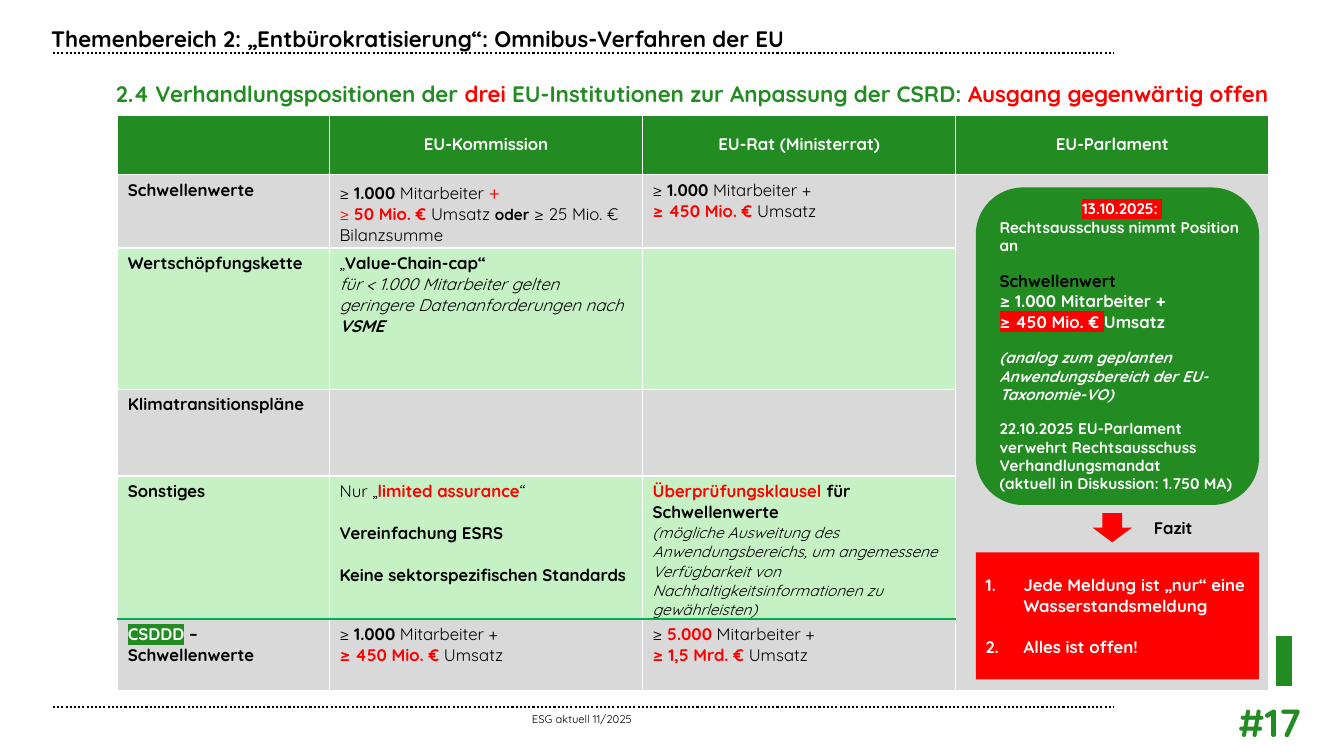
from lxml import etree
from pptx import Presentation
from pptx.dml.color import RGBColor
from pptx.enum.dml import MSO_LINE
from pptx.enum.shapes import MSO_CONNECTOR, MSO_SHAPE
from pptx.enum.text import MSO_ANCHOR, PP_ALIGN
from pptx.oxml.ns import qn
from pptx.util import Pt

LEFT, CENTER, RIGHT = PP_ALIGN.LEFT, PP_ALIGN.CENTER, PP_ALIGN.RIGHT
TOP, MIDDLE = MSO_ANCHOR.TOP, MSO_ANCHOR.MIDDLE
FONT = "Quicksand"
COLORS = {"green": "228B22", "red": "FF0000", "black": "000000", "white": "FFFFFF",
          "grey": "D9D9D9", "mint": "C5F1C5", "rule": "00B050"}
STYLES = {
    "bold": {"bold": True}, "italic": {"italic": True},
    "red": {"color": "red"}, "black": {"color": "black"}, "white": {"color": "white"},
    "on_red": {"highlight": "red"}, "on_green": {"highlight": "green"},
    "11pt": {"size": 11}, "12pt": {"size": 12}, "14pt": {"size": 14},
}

# Content: a text is a list of paragraphs, a paragraph a list of runs (text, styles)
TITLE = "Themenbereich 2: „Entbürokratisierung“: Omnibus-Verfahren der EU"
SUBTITLE = [[("2.4 Verhandlungspositionen der ", ""), ("drei", "red"),
             (" EU-Institutionen zur Anpassung der CSRD: ", ""),
             ("Ausgang gegenwärtig offen", "red")]]
FOOTER, PAGE, CONCLUSION = "ESG aktuell 11/2025", "#17", "Fazit"

HEADERS = ["", "EU-Kommission", "EU-Rat (Ministerrat)", "EU-Parlament"]
STAFF_1000 = [("≥ ", ""), ("1.000", "bold"), (" Mitarbeiter +\n", "")]
SALES_450 = [("≥ 450 Mio. € ", "bold red"), ("Umsatz", "")]
ROWS = [
    ([[("Schwellenwerte", "bold")]],
     [[("≥ ", ""), ("1.000", "bold"), (" Mitarbeiter ", ""), ("+\n", "red 14pt"),
       ("≥ ", "red"), ("50 Mio. € ", "bold red"), ("Umsatz ", ""),
       ("oder", "bold 11pt"), (" ≥ 25 Mio. € Bilanzsumme", "")]],
     [STAFF_1000 + SALES_450]),
    ([[("Wertschöpfungskette", "bold")]],
     [[("„", ""), ("Value-Chain-cap“\n", "bold"),
       ("für < 1.000 Mitarbeiter gelten geringere Datenanforderungen nach ", "italic"),
       ("VSME", "bold italic")]],
     None),
    ([[("Klimatransitionspläne", "bold")]], None, None),
    ([[("Sonstiges", "bold")]],
     [[("Nur „", ""), ("limited assurance", "bold red"), ("“", "")],
      [("Vereinfachung ESRS", "bold")],
      [("Keine sektorspezifischen Standards", "bold")]],
     [[("Überprüfungsklausel ", "bold red"), ("für Schwellenwerte\n", "bold"),
       ("(mögliche Ausweitung des Anwendungsbereichs, um angemessene Verfügbarkeit "
        "von Nachhaltigkeitsinformationen zu gewährleisten)", "italic 11pt")]]),
    ([[("CSDDD", "bold white on_green"), (" – Schwellenwerte", "bold")]],
     [STAFF_1000 + SALES_450],
     [[("≥ ", ""), ("5.000", "bold red"), (" Mitarbeiter +\n", ""),
       ("≥ 1,5 Mrd. € ", "bold red"), ("Umsatz", "")]]),
]
PARLIAMENT = [
    [("13.10.2025: ", "on_red")],
    [("Rechtsausschuss nimmt Position an", "")],
    [("Schwellenwert", "black 12pt")],
    [("≥ 1.000 Mitarbeiter +\n", "12pt"), ("≥ 450 Mio. € ", "12pt on_red"),
     ("Umsatz", "12pt")],
    [("(analog zum geplanten Anwendungsbereich der EU-Taxonomie-VO)", "italic")],
    [("22.10.2025 EU-Parlament verwehrt Rechtsausschuss Verhandlungsmandat\n"
      "(aktuell in Diskussion: 1.750 MA)", "")],
]
TAKEAWAYS = [[("Jede Meldung ist „nur“ eine Wasserstandsmeldung", "")],
             [("Alles ist offen!", "")]]

# Layout
COLUMN_WIDTHS = [151.2, 223.7, 223.7, 223.7]
ROW_HEIGHTS = [42.5, 52.6, 100.8, 62, 102.2, 51]
TABLE_LEFT, TABLE_TOP = 84.2, 82.1
PANEL_LEFT, PANEL_WIDTH = 697, 202.3
RULE_LEFT, RULE_RIGHT = 37.8, 795

prs = Presentation()
prs.slide_width, prs.slide_height = Pt(960), Pt(540)
slide = prs.slides.add_slide(prs.slide_layouts[6])


def rgb(name):
    return RGBColor.from_string(COLORS[name])


def add_run(paragraph, text, size, color, bold=False, italic=False, highlight=None):
    run = paragraph.add_run()
    run.text = text
    font = run.font
    font.name, font.size, font.bold, font.italic = FONT, Pt(size), bold, italic
    font.color.rgb = rgb(color)
    if highlight:
        mark = etree.Element(qn("a:highlight"))
        etree.SubElement(mark, qn("a:srgbClr"), val=COLORS[highlight])
        run._r.rPr.find(qn("a:latin")).addprevious(mark)


def write(frame, text, align=LEFT, gaps=(), size=12, color="black", bold=False):
    """Fill a frame; gaps maps a paragraph's index to the space before it."""
    frame.word_wrap = True
    paragraphs = [[(text, "")]] if isinstance(text, str) else text
    for i, runs in enumerate(paragraphs):
        paragraph = frame.add_paragraph() if i else frame.paragraphs[0]
        paragraph.alignment = align
        if i in gaps:
            paragraph.space_before = Pt(gaps[i])
        for words, styles in runs:
            look = {"size": size, "color": color, "bold": bold}
            for style in styles.split():
                look.update(STYLES[style])
            for n, line in enumerate(words.split("\n")):
                if n:
                    paragraph.add_line_break()
                if line:
                    add_run(paragraph, line, **look)


def add_label(left, top, width, height, text, inset=True, anchor=TOP, **look):
    frame = slide.shapes.add_textbox(Pt(left), Pt(top), Pt(width), Pt(height)).text_frame
    frame.vertical_anchor = anchor
    if not inset:
        frame.margin_left = frame.margin_right = frame.margin_top = frame.margin_bottom = 0
    write(frame, text, **look)


def add_block(kind, left, top, width, height, color):
    block = slide.shapes.add_shape(kind, Pt(left), Pt(top), Pt(width), Pt(height))
    block.shadow.inherit = False
    block.fill.solid()
    block.fill.fore_color.rgb = rgb(color)
    block.line.fill.background()
    block.text_frame.vertical_anchor = MIDDLE
    return block


def add_border(cell, side):
    line = etree.Element(qn("a:" + side), w=str(Pt(1)))
    fill = etree.SubElement(line, qn("a:solidFill"))
    etree.SubElement(fill, qn("a:srgbClr"), val=COLORS["rule"])
    cell._tc.get_or_add_tcPr().insert(0, line)


# Dotted rules, page number, footer and side mark
for y in (37.8, 504.7):
    rule = slide.shapes.add_connector(MSO_CONNECTOR.STRAIGHT, Pt(RULE_LEFT), Pt(y),
                                      Pt(RULE_RIGHT), Pt(y))
    rule.line.color.rgb = rgb("black")
    rule.line.width = Pt(1.5)
    rule.line.dash_style = MSO_LINE.ROUND_DOT
    etree.SubElement(rule._element.spPr, qn("a:effectLst"))
add_label(820, 495.4, 116.7, 41, PAGE, align=RIGHT, size=28, color="green", bold=True)
add_label(37.4, 509, 756.7, 9.4, FOOTER, inset=False, anchor=MIDDLE, align=CENTER, size=8)
add_block(MSO_SHAPE.RECTANGLE, 911.5, 454.3, 11.4, 35.7, "green")

# Headings
add_label(82.8, 56.9, 833.8, 25.2, SUBTITLE, inset=False, size=16, color="green", bold=True)
add_label(29.5, 14.4, 788.4, 46, TITLE, size=16, bold=True)

# Comparison table
table = slide.shapes.add_table(len(ROW_HEIGHTS), len(COLUMN_WIDTHS), Pt(TABLE_LEFT),
                               Pt(TABLE_TOP), Pt(sum(COLUMN_WIDTHS)),
                               Pt(sum(ROW_HEIGHTS))).table
for column, width in zip(table.columns, COLUMN_WIDTHS):
    column.width = Pt(width)
for row, height in zip(table.rows, ROW_HEIGHTS):
    row.height = Pt(height)
table.cell(1, 3).merge(table.cell(len(ROWS), 3))
for r, row in enumerate([HEADERS] + [list(texts) + [None] for texts in ROWS]):
    for c, text in enumerate(row):
        cell = table.cell(r, c)
        cell.fill.solid()
        if r == 0:
            cell.fill.fore_color.rgb = rgb("green")
            cell.vertical_anchor = MIDDLE
            if text:
                write(cell.text_frame, text, align=CENTER, color="white", bold=True)
            continue
        cell.fill.fore_color.rgb = rgb("grey" if r % 2 or c == 3 else "mint")
        cell.margin_bottom = 0
        if text:
            write(cell.text_frame, text, gaps={1: 15, 2: 15})
        if c < 3 and r >= len(ROWS) - 1:
            add_border(cell, "lnT" if r == len(ROWS) else "lnB")

# Parliament position
position = add_block(MSO_SHAPE.ROUNDED_RECTANGLE, PANEL_LEFT, 133.9, PANEL_WIDTH, 226.8,
                     "green").text_frame
position.margin_right = 0
write(position, PARLIAMENT, gaps={2: 11.5, 4: 12, 5: 11}, size=11, color="white", bold=True)
position.paragraphs[0].alignment = CENTER

# Conclusion
add_block(MSO_SHAPE.DOWN_ARROW, 780.5, 366.5, 28, 20.9, "red")
takeaways = add_block(MSO_SHAPE.RECTANGLE, PANEL_LEFT, 394.6, PANEL_WIDTH, 90.7,
                      "red").text_frame
write(takeaways, TAKEAWAYS, gaps={1: 15}, color="white", bold=True)
for item in takeaways.paragraphs:
    properties = item._p.get_or_add_pPr()
    properties.set("marL", str(Pt(27)))
    properties.set("indent", str(Pt(-27)))
    etree.SubElement(properties, qn("a:buAutoNum"), type="arabicPeriod")
add_label(817.2, 366.5, 70.6, 21.6, CONCLUSION, bold=True)

prs.save("out.pptx")
